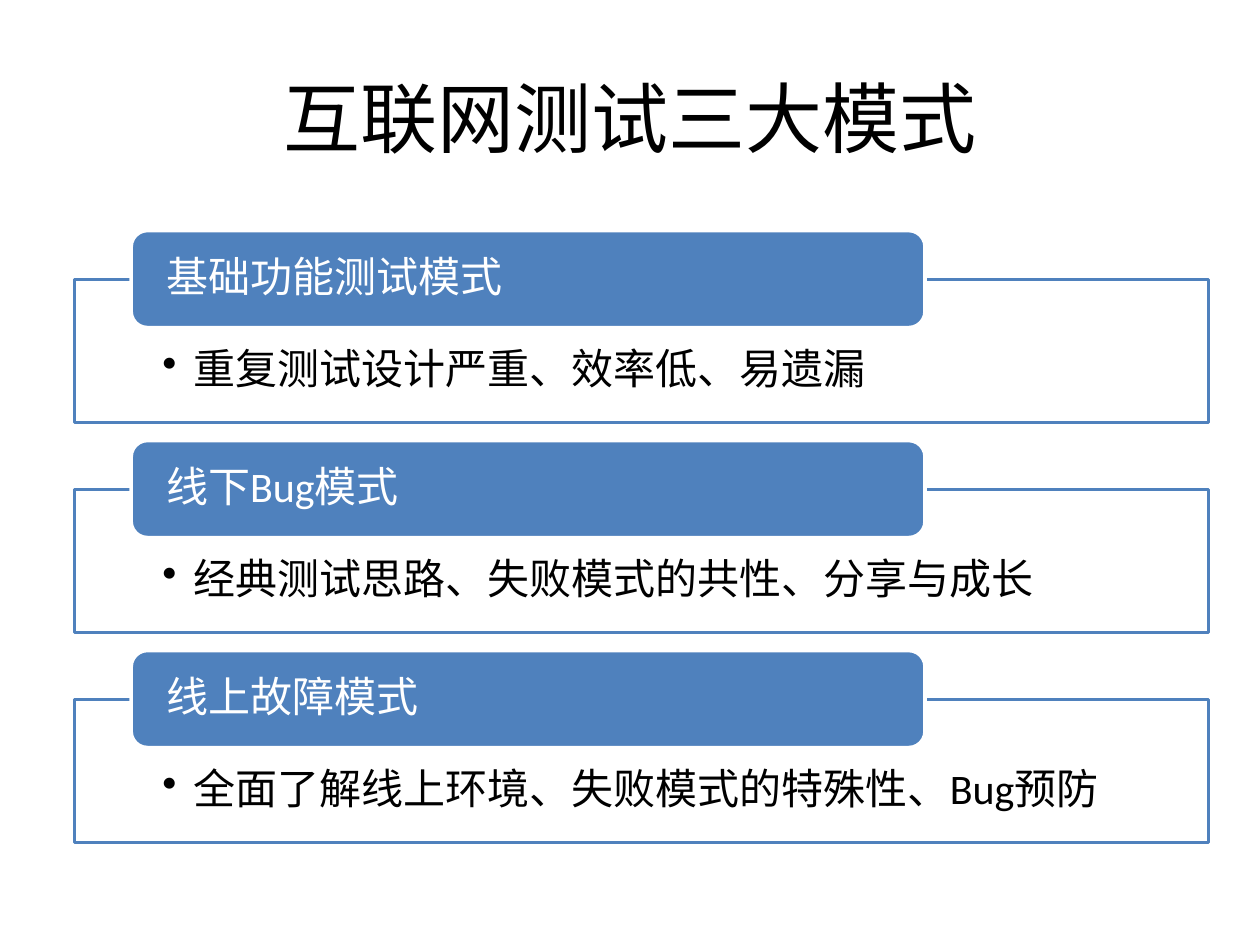
import pptx
import pptx.dml.color
import pptx.enum.shapes
import pptx.enum.text
import pptx.oxml.ns
import pptx.util
from lxml import etree

Pt = pptx.util.Pt
Shape = pptx.enum.shapes.MSO_SHAPE
Align = pptx.enum.text.PP_ALIGN
Anchor = pptx.enum.text.MSO_ANCHOR
qn = pptx.oxml.ns.qn

MODES = [
    ("基础功能测试模式", "重复测试设计严重、效率低、易遗漏"),
    ("线下Bug模式", "经典测试思路、失败模式的共性、分享与成长"),
    ("线上故障模式", "全面了解线上环境、失败模式的特殊性、Bug预防"),
]
ROW_PITCH = 120


def color(value):
    return pptx.dml.color.RGBColor.from_string(value)


class ModeSlide:
    font = "Calibri"
    blue = "4F81BD"
    white = "FFFFFF"
    black = "000000"

    def __init__(self, deck):
        self.page = deck.slides.add_slide(deck.slide_layouts[5])

    def format_text(self, frame, size, ink, align, anchor, insets):
        frame.word_wrap = True
        frame.auto_size = pptx.enum.text.MSO_AUTO_SIZE.NONE
        frame.vertical_anchor = anchor
        frame.margin_left, frame.margin_top, frame.margin_right, frame.margin_bottom = map(Pt, insets)
        para = frame.paragraphs[0]
        para.alignment = align
        for span in para.runs:
            span.font.name = self.font
            span.font.size = Pt(size)
            span.font.color.rgb = color(ink)
        return para

    def title(self, text):
        box = self.page.shapes.title
        box.left, box.top, box.width, box.height = Pt(36), Pt(21.6), Pt(648), Pt(90)
        box.text_frame.text = text
        self.format_text(box.text_frame, 44, self.black, Align.CENTER, Anchor.MIDDLE, (7.2, 3.6, 7.2, 3.6))

    def block(self, kind, bounds, fill, line, text, ink, anchor, insets):
        box = self.page.shapes.add_shape(kind, *map(Pt, bounds))
        box.shadow.inherit = False
        box.fill.solid()
        box.fill.fore_color.rgb = color(fill)
        box.line.color.rgb = color(line)
        box.line.width = Pt(2)
        box.text_frame.text = text
        para = self.format_text(box.text_frame, 24, ink, Align.LEFT, anchor, insets)
        para.line_spacing = 0.9
        return box, para

    def panel(self, top, text):
        box, para = self.block(
            Shape.RECTANGLE, (42.5, top, 648, 81.9), self.white, self.blue,
            text, self.black, Anchor.TOP, (50.3, 39.6, 50.3, 13.7))
        fill_color = box.fill._xPr.find(qn("a:solidFill"))[0]
        etree.SubElement(fill_color, qn("a:alpha"), val="90000")
        properties = para._p.get_or_add_pPr()
        properties.set("marL", str(Pt(18)))
        properties.set("indent", str(-Pt(18)))
        etree.SubElement(properties, qn("a:buChar"), char="•")

    def header(self, top, text):
        self.block(
            Shape.ROUNDED_RECTANGLE, (75, top, 453.6, 55.4), self.blue, self.white,
            text, self.white, Anchor.MIDDLE, (17.2, 0, 17.2, 0))


def main():
    deck = pptx.Presentation()
    deck.slide_width, deck.slide_height = Pt(720), Pt(540)
    slide = ModeSlide(deck)
    slide.title("互联网测试三大模式")
    for index, (name, detail) in enumerate(MODES):
        offset = index * ROW_PITCH
        slide.panel(159.6 + offset, detail)
        slide.header(131.8 + offset, name)
    deck.save("out.pptx")


if __name__ == "__main__":
    main()
